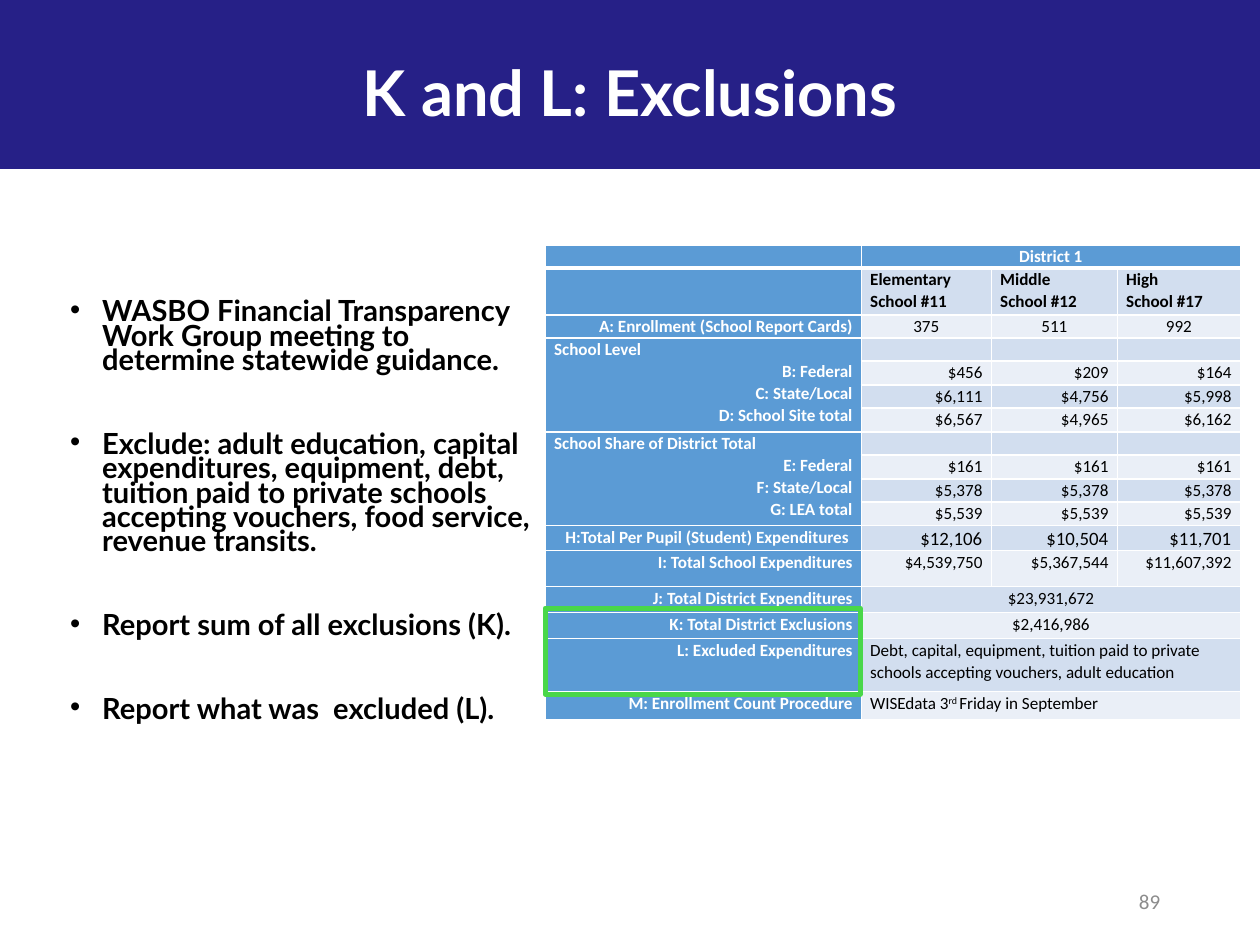
from pptx import Presentation
from pptx.dml.color import RGBColor as RGB
from pptx.enum.shapes import MSO_SHAPE as SHAPE
from pptx.enum.text import MSO_ANCHOR as ANCHOR, PP_ALIGN as ALIGN
from pptx.oxml.ns import qn
from pptx.util import Inches, Pt
from lxml.etree import SubElement

COLORS = {
    "banner": "262087", "white": "FFFFFF", "black": "000000", "number": "8C8C8C",
    "label": "5B9BD5", "odd": "D2DEEF", "even": "EAEFF7", "highlight": "49D749",
}
L, C, R = ALIGN.LEFT, ALIGN.CENTER, ALIGN.RIGHT

TITLE = "K and L: Exclusions"
PAGE = "89"
BULLETS = [
    "WASBO Financial Transparency Work Group meeting to determine statewide guidance.",
    "Exclude: adult education, capital expenditures, equipment, debt, tuition paid "
    "to private schools accepting vouchers, food service, revenue transits.",
    "Report sum of all exclusions (K).",
    "Report what was  excluded (L).",
]
COL_WIDTHS = [316, 130, 126, 123]
SCHOOL_LEVEL = ["School Level", "B: Federal", "C: State/Local", "D: School Site total"]
SCHOOL_SHARE = ["School Share of District Total", "E: Federal", "F: State/Local", "G: LEA total"]
ROWS = [
    (23, [], [["District 1"]], C),
    (47, [], [["Elementary", "School #11"], ["Middle", "School #12"], ["High", "School #17"]], L),
    (23, ["A: Enrollment (School Report Cards)"], [["375"], ["511"], ["992"]], C),
    (23, SCHOOL_LEVEL, [[], [], []], R),
    (24, None, [["$456"], ["$209"], ["$164"]], R),
    (23, None, [["$6,111"], ["$4,756"], ["$5,998"]], R),
    (24, None, [["$6,567"], ["$4,965"], ["$6,162"]], R),
    (23, SCHOOL_SHARE, [[], [], []], R),
    (24, None, [["$161"], ["$161"], ["$161"]], R),
    (23, None, [["$5,378"], ["$5,378"], ["$5,378"]], R),
    (24, None, [["$5,539"], ["$5,539"], ["$5,539"]], R),
    (25, ["H:Total Per Pupil (Student) Expenditures "], [["$12,106"], ["$10,504"], ["$11,701"]], R),
    (36, ["I: Total School Expenditures"], [["$4,539,750"], ["$5,367,544"], ["$11,607,392"]], R),
    (26, ["J: Total District Expenditures"], [["$23,931,672"]], C),
    (26, ["K: Total District Exclusions"], [["$2,416,986"]], C),
    (53, ["L: Excluded Expenditures"],
     [["Debt, capital, equipment, tuition paid to private schools accepting vouchers, "
       "adult education"]], L),
    (28, ["M: Enrollment Count Procedure"], [[("WISEdata 3", "rd ", "Friday in September")]], L),
]
BOLD_ROWS = (0, 1)
PER_PUPIL_ROW = 11


def px(n):
    return round(n * 914400 / 123)


def write(tf, paragraphs, size, font="Calibri", color="black", bold=False,
          align=L, first_align=None, spacing=None, gap=0, bullet=False):
    for i, runs in enumerate(paragraphs):
        p = tf.paragraphs[0] if i == 0 else tf.add_paragraph()
        p.alignment = first_align if i == 0 and first_align is not None else align
        if spacing:
            p.line_spacing = spacing
        if gap and i:
            p.space_before = Pt(gap)
        if bullet:
            pPr = p._p.get_or_add_pPr()
            pPr.set("marL", str(px(32)))
            pPr.set("indent", str(-px(32)))
            SubElement(pPr, qn("a:buFont"), typeface="Arial")
            SubElement(pPr, qn("a:buChar"), char="•")
        for j, text in enumerate([runs] if isinstance(runs, str) else runs):
            r = p.add_run()
            r.text = text
            r.font.name, r.font.size, r.font.bold = font, Pt(size), bold
            r.font.color.rgb = RGB.from_string(COLORS[color])
            if j % 2:
                r.font._element.set("baseline", "30000")


def add_text(s, box, paragraphs, anchor=ANCHOR.TOP, **fmt):
    tf = s.shapes.add_textbox(*map(px, box)).text_frame
    tf.word_wrap = True
    tf.vertical_anchor = anchor
    write(tf, paragraphs, **fmt)


def add_rect(s, box, fill=None, line=None):
    sp = s.shapes.add_shape(SHAPE.RECTANGLE, *map(px, box))
    sp.shadow.inherit = False
    if fill:
        sp.fill.solid()
        sp.fill.fore_color.rgb = RGB.from_string(COLORS[fill])
    else:
        sp.fill.background()
    if line:
        sp.line.color.rgb = RGB.from_string(COLORS[line])
        sp.line.width = Pt(3)
    else:
        sp.line.fill.background()


def style_cell(cell, fill, top, bottom):
    cell.margin_left = cell.margin_right = px(9)
    cell.margin_top = cell.margin_bottom = 0
    tcPr = cell._tc.get_or_add_tcPr()
    for side, width in (("L", 1), ("R", 1), ("T", top), ("B", bottom)):
        ln = SubElement(tcPr, qn("a:ln" + side), w=str(Pt(width)))
        SubElement(SubElement(ln, qn("a:solidFill")), qn("a:srgbClr"), val=COLORS["white"])
    cell.fill.solid()
    cell.fill.fore_color.rgb = RGB.from_string(COLORS[fill])
    cell.text_frame.paragraphs[0]._p.get_or_add_endParaRPr().set("sz", "1000")


def add_exclusions_table(s, left, top):
    heights = [row[0] for row in ROWS]
    frame = s.shapes.add_table(len(ROWS), len(COL_WIDTHS), px(left), px(top),
                               px(sum(COL_WIDTHS)), px(sum(heights)))
    table = frame.table
    table.first_row = table.horz_banding = False
    for col, width in zip(table.columns, COL_WIDTHS):
        col.width = px(width)
    for i, (height, label, values, align) in enumerate(ROWS):
        table.rows[i].height = px(height)
        band = "odd" if i % 2 else "even"
        for j in range(len(COL_WIDTHS)):
            style_cell(table.cell(i, j), "label" if i == 0 or j == 0 else band,
                       3 if i == 1 else 1, 3 if i == 0 else 1)
        if label:
            cell = table.cell(i, 0)
            if len(label) > 1:
                cell.merge(table.cell(i + len(label) - 1, 0))
            write(cell.text_frame, label, 10, color="white", bold=True, align=R,
                  first_align=L if len(label) > 1 else R, spacing=1.07)
        if len(values) == 1:
            table.cell(i, 1).merge(table.cell(i, 3))
        for j, value in enumerate(values, 1):
            write(table.cell(i, j).text_frame, value, 11 if i == PER_PUPIL_ROW else 10,
                  color="black" if i else "white", bold=i in BOLD_ROWS,
                  align=align, spacing=1.07)


def main():
    prs = Presentation()
    prs.slide_width, prs.slide_height = Inches(10.24), Inches(7.68)
    s = prs.slides.add_slide(prs.slide_layouts[6])
    add_rect(s, (-1, 0, 1261, 169), fill="banner")
    add_text(s, (0, 0, 1260, 182), [TITLE], anchor=ANCHOR.MIDDLE, size=36.9,
             font="Lato", color="white", bold=True, align=C)
    add_text(s, (889, 876, 283, 50), [PAGE], anchor=ANCHOR.MIDDLE, size=12.3,
             color="number", align=R)
    add_text(s, (58, 296, 486, 475), BULLETS, size=17, font="Lato", bold=True,
             spacing=0.7, gap=34.7, bullet=True)
    add_exclusions_table(s, 545, 245)
    add_rect(s, (545, 608, 315, 86), line="highlight")
    prs.save("out.pptx")


if __name__ == "__main__":
    main()
